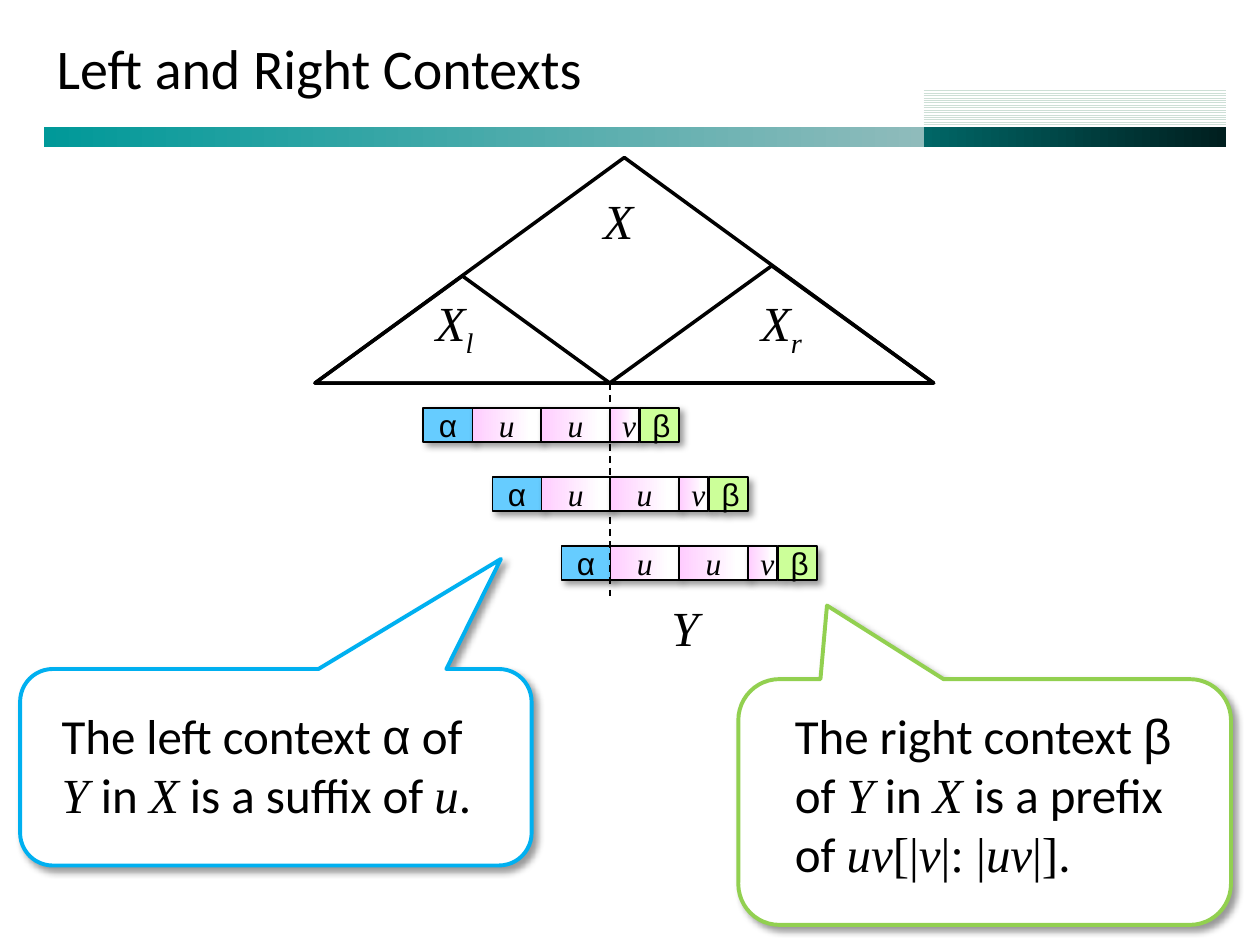
from lxml.etree import SubElement
from pptx import Presentation
from pptx.dml.color import RGBColor
from pptx.enum.dml import MSO_LINE, MSO_PATTERN
from pptx.enum.shapes import MSO_CONNECTOR, MSO_SHAPE
from pptx.enum.text import MSO_ANCHOR, PP_ALIGN
from pptx.oxml.ns import qn
from pptx.util import Inches, Pt

COLORS = {
    "ink": "000000", "paper": "FFFFFF",
    "teal": "009999", "pale_teal": "8FBBBB",
    "deep_teal": "006666", "dark_teal": "001F1F", "stripe": "CDDFD6",
    "left": "66CCFF", "factor": "FFCCFF", "right": "CCFF99",
    "left_callout": "00B0F0", "right_callout": "92D050",
}
# Run styles: font name and italic
STYLES = {
    "body": ("Calibri", False), "greek": ("Arial", False),
    "math": ("Times New Roman", True), "symbol": ("Times New Roman", False),
}
COLUMNS, ROWS = 100, 75


def color(name):
    return RGBColor.from_string(COLORS[name])


def write(paragraph, text, style="body", size=28, baseline=0):
    """Append a run; baseline is a percentage, negative for a subscript."""
    run = paragraph.add_run()
    run.text = text
    run.font.name, run.font.italic = STYLES[style]
    run.font.size = Pt(size)
    run.font.color.rgb = color("ink")
    if baseline:
        run.font._element.set("baseline", str(baseline * 1000))


def add_shadow(shape):
    effects = shape._element.spPr.find(qn("a:effectLst"))
    outer = SubElement(effects, qn("a:outerShdw"), blurRad=str(Pt(4)), dist=str(Pt(3)),
                       dir=str(45 * 60000), algn="tl", rotWithShape="0")
    shade = SubElement(outer, qn("a:srgbClr"), val=COLORS["ink"])
    SubElement(shade, qn("a:alpha"), val="40000")


class SlideBuilder:
    """Draws on one slide, with places given as columns and rows of a grid."""

    def __init__(self, presentation):
        self.column = presentation.slide_width / COLUMNS
        self.row = presentation.slide_height / ROWS
        self.slide = presentation.slides.add_slide(presentation.slide_layouts[5])

    def place(self, left, top, width, height):
        return (round(left * self.column), round(top * self.row),
                round(width * self.column), round(height * self.row))

    def title(self, text, *box):
        shape = self.slide.shapes.title
        shape.left, shape.top, shape.width, shape.height = self.place(*box)
        frame = shape.text_frame
        frame.vertical_anchor = MSO_ANCHOR.MIDDLE
        frame.paragraphs[0].alignment = PP_ALIGN.LEFT
        write(frame.paragraphs[0], text, size=32)

    def shape(self, kind, *box, fill=None, line=None, width=1, shadow=False):
        shape = self.slide.shapes.add_shape(kind, *self.place(*box))
        shape.shadow.inherit = False
        if fill:
            shape.fill.solid()
            shape.fill.fore_color.rgb = color(fill)
        else:
            shape.fill.background()
        if line:
            shape.line.color.rgb = color(line)
            shape.line.width = Pt(width)
        else:
            shape.line.fill.background()
        if shadow:
            add_shadow(shape)
        return shape

    def gradient(self, shape, *stops, angle=0):
        """Fill a shape with two stops, each a share and a colour name."""
        shape.fill.gradient()
        shape.fill.gradient_angle = angle
        for stop, (position, name) in zip(shape.fill.gradient_stops, stops):
            stop.position = position
            stop.color.rgb = color(name)

    def block(self, text, style, fill, *box):
        shape = self.shape(MSO_SHAPE.RECTANGLE, *box, fill=fill, line="ink", shadow=True)
        frame = shape.text_frame
        frame.vertical_anchor = MSO_ANCHOR.MIDDLE
        frame.paragraphs[0].alignment = PP_ALIGN.CENTER
        write(frame.paragraphs[0], text, style, size=18)
        return shape

    def triangle(self, *box):
        self.shape(MSO_SHAPE.ISOSCELES_TRIANGLE, *box, line="ink", width=2)

    def text(self, runs, *box, wrap=True):
        shape = self.slide.shapes.add_textbox(*self.place(*box))
        shape.text_frame.word_wrap = wrap
        for run in runs:
            write(shape.text_frame.paragraphs[0], *run)
        return shape

    def label(self, text, left, top, subscript=None):
        box = self.text([(text, "math")], left, top, 5.5, 5.7, wrap=False)
        if subscript:
            write(box.text_frame.paragraphs[0], subscript, "math", baseline=-25)

    def dashed_line(self, left, top, bottom):
        start_x, start_y, _, length = self.place(left, top, 0, bottom - top)
        line = self.slide.shapes.add_connector(
            MSO_CONNECTOR.STRAIGHT, start_x, start_y, start_x, start_y + length)
        line.line.color.rgb = color("ink")
        line.line.width = Pt(1)
        line.line.dash_style = MSO_LINE.DASH
        SubElement(line._element.spPr, qn("a:effectLst"))

    def callout(self, runs, line, box, text_box, pointer):
        bubble = self.shape(MSO_SHAPE.ROUNDED_RECTANGULAR_CALLOUT, *box,
                            fill="paper", line=line, width=2.25, shadow=True)
        bubble.adjustments[0], bubble.adjustments[1] = pointer
        self.group(bubble, self.text(runs, *text_box))

    def group(self, *shapes):
        self.slide.shapes.add_group_shape(shapes)

    def banner(self, left, split, right, top):
        long_bar = self.shape(MSO_SHAPE.RECTANGLE, left, top, split - left, 1.6)
        self.gradient(long_bar, (0, "teal"), (1, "pale_teal"))
        stripes = self.shape(MSO_SHAPE.RECTANGLE, split, top - 3.1, right - split, 3)
        stripes.fill.patterned()
        stripes.fill.pattern = MSO_PATTERN.NARROW_HORIZONTAL
        stripes.fill.fore_color.rgb = color("stripe")
        stripes.fill.back_color.rgb = color("paper")
        short_bar = self.shape(MSO_SHAPE.RECTANGLE, split, top, right - split, 1.6)
        self.gradient(short_bar, (0, "deep_teal"), (1, "dark_teal"))

    def occurrence(self, left, top):
        """Draw one string: left context, the factors u, u, v, right context."""
        height = 2.7
        self.block("α", "greek", "left", left, top, 3.9, height)
        left += 3.9
        factors = []
        for text, step, width in (("u", 5.45, 5.45), ("u", 5.45, 5.45), ("v", 2.4, 2.3)):
            factor = self.block(text, "math", "factor", left, top, width, height)
            self.gradient(factor, (0.15, "paper"), (1, "factor"), angle=180)
            factors.append(factor)
            left += step
        self.group(*factors)
        self.block("β", "greek", "right", left, top, 3.1, height)


def main():
    presentation = Presentation()
    presentation.slide_width, presentation.slide_height = Inches(10), Inches(7.5)
    builder = SlideBuilder(presentation)
    builder.banner(3.5, 73.3, 97.3, 10.1)
    builder.title("Left and Right Contexts", 3.5, 1.3, 93.8, 8.1)

    left, middle, right, base = 25, 48.4, 74.1, 30.4
    for index in range(3):
        shift = index * 5.48
        builder.occurrence(33.6 + shift, 32.4 + shift)
    builder.dashed_line(middle, base, 47.3)

    for start, end, height in ((left, right, 17.9), (left, middle, 8.5), (middle, right, 9.3)):
        builder.triangle(start, base - height, end - start, height)
    builder.label("X", 46.9, 14.6)
    builder.label("X", 33.6, 22.7, subscript="l")
    builder.label("X", 59.4, 22.7, subscript="r")
    builder.label("Y", 52.3, 46.9)

    builder.callout(
        [("The left context ",), ("α", "greek"), (" of ",), ("Y ", "math"), ("in ",),
         ("X", "math"), (" is a suffix of ",), ("u", "math"), (".",)],
        "left_callout", (1.6, 53.1, 40.6, 15.6), (3.9, 55.5, 35.9, 12.5), (0.44, -1.06))
    builder.callout(
        [("The right context ",), ("β", "greek"), (" of ",), ("Y", "math"), (" in ",),
         ("X", "math"), (" is a prefix of ",), ("uv", "math"), ("[|", "symbol"),
         ("v", "math"), ("|: |", "symbol"), ("uv", "math"), ("|]", "symbol"), (".",)],
        "right_callout", (58.6, 53.9, 39.1, 19.5), (62.1, 55.5, 33.6, 16.4), (-0.32, -0.8))
    presentation.save("out.pptx")


if __name__ == "__main__":
    main()
